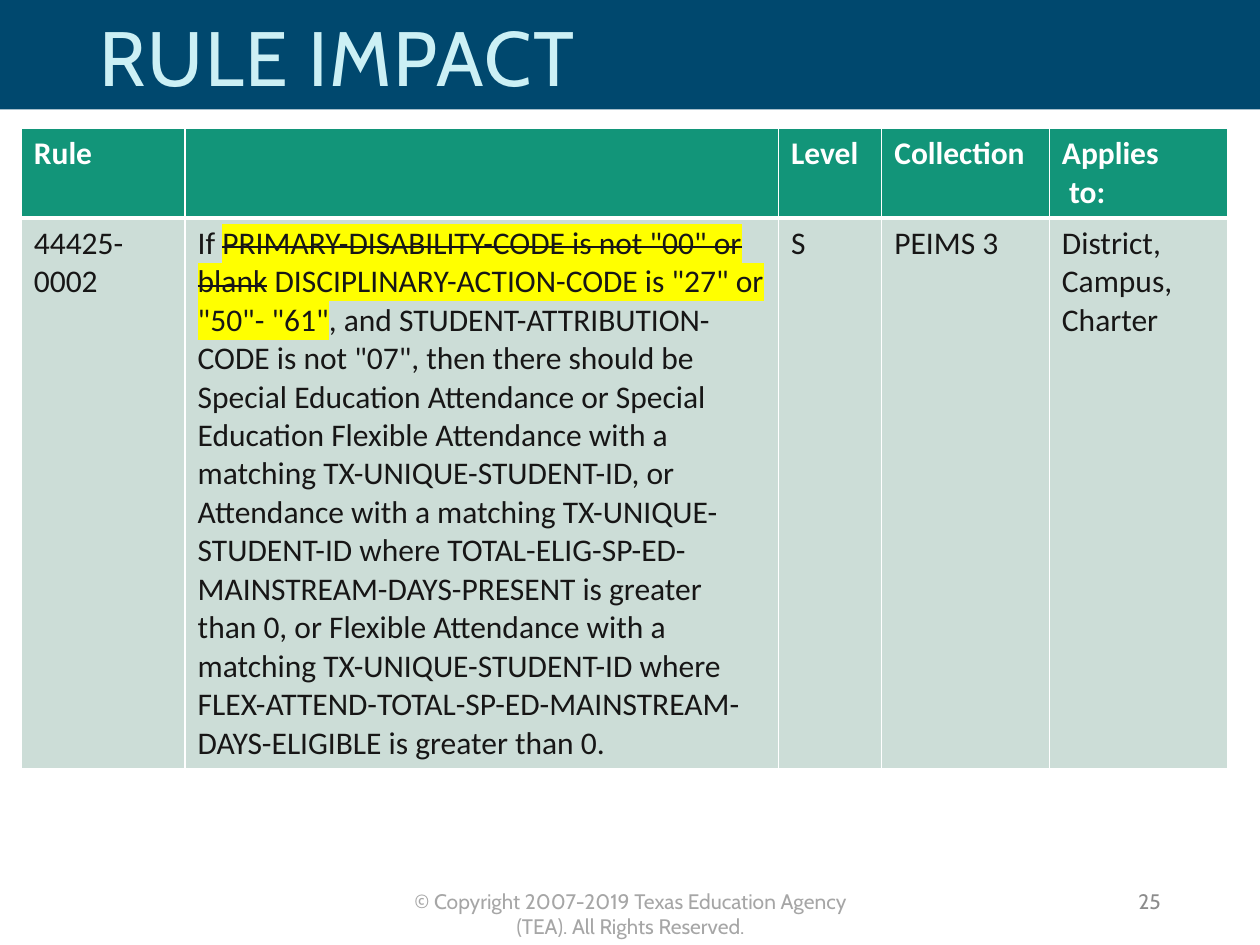
from pptx import Presentation
from pptx.dml.color import RGBColor
from pptx.enum.shapes import MSO_SHAPE as Shape
from pptx.enum.text import MSO_ANCHOR as Anchor, MSO_AUTO_SIZE as AutoSize, PP_ALIGN as Align
from pptx.oxml import parse_xml
from pptx.oxml.ns import nsdecls
from pptx.util import Pt

NAVY, GREEN, PALE_GREEN = "00486E", "129579", "CCDDD7"
WHITE, INK, YELLOW = "FFFFFF", "171616", "FFFF00"

TITLE = {"name": "Cabin", "size": Pt(44), "color": "CCF0F5"}
FOOTER = {"name": "Cabin", "size": Pt(12), "color": "A6A6A6"}
PAGE_NUMBER = {**FOOTER, "color": "8C8C8C"}
HEADER = {"name": "Calibri", "size": Pt(18), "color": WHITE, "bold": True}
BODY = {**HEADER, "color": INK, "bold": False}

COLUMN_WIDTHS = [93.6, 339.1, 59, 95.8, 102.2]
ROW_HEIGHTS = [50, 314.6]

# Each cell is a list of paragraphs; each paragraph is a list of (text, marks).
HEADERS = [
    [[("Rule", "")]],
    [],
    [[("Level", "")]],
    [[("Collection", "")]],
    [[("Applies", "")], [(" to:", "")]],
]
RULE_CELLS = [
    [[("44425-0002", "")]],
    [[
        ("If ", ""),
        ('PRIMARY-DISABILITY-CODE is not "00" or blank', "highlight strike"),
        (' DISCIPLINARY-ACTION-CODE is "27" or "50"- "61"', "highlight"),
        (', and STUDENT-ATTRIBUTION-CODE is not "07", then there should be '
         "Special Education Attendance or Special Education Flexible Attendance "
         "with a matching TX-UNIQUE-STUDENT-ID, or Attendance with a matching "
         "TX-UNIQUE-STUDENT-ID where TOTAL-ELIG-SP-ED-MAINSTREAM-DAYS-PRESENT "
         "is greater than 0, or Flexible Attendance with a matching "
         "TX-UNIQUE-STUDENT-ID where "
         "FLEX-ATTEND-TOTAL-SP-ED-MAINSTREAM-DAYS-ELIGIBLE is greater than 0.", ""),
    ]],
    [[("S", "")]],
    [[("PEIMS 3", "")]],
    [[("District, Campus,", "")], [("Charter", "")]],
]


def set_color(color_format, value):
    color_format.rgb = RGBColor.from_string(value)


def set_fill(target, color):
    target.fill.solid()
    set_color(target.fill.fore_color, color)


def add_run(paragraph, text, font_format, marks=""):
    run = paragraph.add_run()
    run.text = text
    for attribute, value in font_format.items():
        if attribute == "color":
            set_color(run.font.color, value)
        else:
            setattr(run.font, attribute, value)
    properties = run._r.get_or_add_rPr()
    if "strike" in marks:
        properties.set("strike", "sngStrike")
    if "highlight" in marks:
        # The schema wants the highlight right after the text fill.
        properties.find("{*}solidFill").addnext(parse_xml(
            f'<a:highlight {nsdecls("a")}><a:srgbClr val="{YELLOW}"/></a:highlight>'))
    return run


def add_band(slide, width, height):
    """Put the title band behind everything else."""
    band = slide.shapes.add_shape(Shape.RECTANGLE, 0, 0, width, height)
    band.shadow.inherit = False
    set_fill(band, NAVY)
    band.line.fill.background()
    slide.shapes._spTree.insert(2, band._element)


def fill_title(title, text):
    place = {"left": Pt(49.7), "top": Pt(3.6), "width": Pt(576), "height": Pt(62.6)}
    for attribute, value in place.items():
        setattr(title, attribute, value)
    frame = title.text_frame
    frame.vertical_anchor = Anchor.MIDDLE
    frame.auto_size = AutoSize.NONE
    paragraph = frame.paragraphs[0]
    paragraph.alignment = Align.LEFT
    paragraph.line_spacing = 0.9
    run = add_run(paragraph, text, TITLE)
    run._r.get_or_add_rPr().set("spc", "100")


def add_text(slide, box, text, font_format, alignment, anchor=Anchor.TOP):
    frame = slide.shapes.add_textbox(*map(Pt, box)).text_frame
    frame.word_wrap = True
    frame.vertical_anchor = anchor
    frame.paragraphs[0].alignment = alignment
    add_run(frame.paragraphs[0], text, font_format)


def set_borders(cell, bottom_width):
    properties = cell._tc.get_or_add_tcPr()
    for index, side in enumerate("LRTB"):
        width = Pt(bottom_width if side == "B" else 1)
        properties.insert(index, parse_xml(
            f'<a:ln{side} {nsdecls("a")} w="{width}"><a:solidFill>'
            f'<a:srgbClr val="{WHITE}"/></a:solidFill></a:ln{side}>'))


def fill_cell(cell, paragraphs, font_format, color, bottom_width, space_after):
    set_fill(cell, color)
    set_borders(cell, bottom_width)
    frame = cell.text_frame
    for index, runs in enumerate(paragraphs):
        paragraph = frame.add_paragraph() if index else frame.paragraphs[0]
        if index == len(paragraphs) - 1:
            paragraph.space_after = Pt(space_after)
        for text, marks in runs:
            add_run(paragraph, text, font_format, marks)


def add_rule_table(slide, left, top):
    table = slide.shapes.add_table(
        len(ROW_HEIGHTS), len(COLUMN_WIDTHS), Pt(left), Pt(top),
        Pt(sum(COLUMN_WIDTHS)), Pt(sum(ROW_HEIGHTS))).table
    table.horz_banding = False
    for column, width in zip(table.columns, COLUMN_WIDTHS):
        column.width = Pt(width)
    for row, height in zip(table.rows, ROW_HEIGHTS):
        row.height = Pt(height)
    row_formats = [(HEADERS, HEADER, GREEN, 3, 0), (RULE_CELLS, BODY, PALE_GREEN, 1, 6)]
    for row, (contents, *cell_format) in zip(table.rows, row_formats):
        for cell, paragraphs in zip(row.cells, contents):
            fill_cell(cell, paragraphs, *cell_format)
    # The lower row shares the header's thick edge.
    for cell in table.rows[1].cells:
        cell._tc.tcPr.find("{*}lnT").set("w", str(Pt(3)))


def main():
    presentation = Presentation()
    presentation.slide_width, presentation.slide_height = Pt(720), Pt(540)
    slide = presentation.slides.add_slide(presentation.slide_layouts[5])
    add_band(slide, presentation.slide_width, Pt(62.6))
    fill_title(slide.shapes.title, "RULE IMPACT")
    add_rule_table(slide, 12.2, 73.4)
    add_text(slide, (218.9, 504, 283, 21.6),
             "© Copyright 2007-2019 Texas Education Agency (TEA). All Rights Reserved.",
             FOOTER, Align.CENTER)
    add_text(slide, (508.3, 500.4, 162, 28.8), "25", PAGE_NUMBER, Align.RIGHT, Anchor.MIDDLE)
    presentation.save("out.pptx")


if __name__ == "__main__":
    main()
